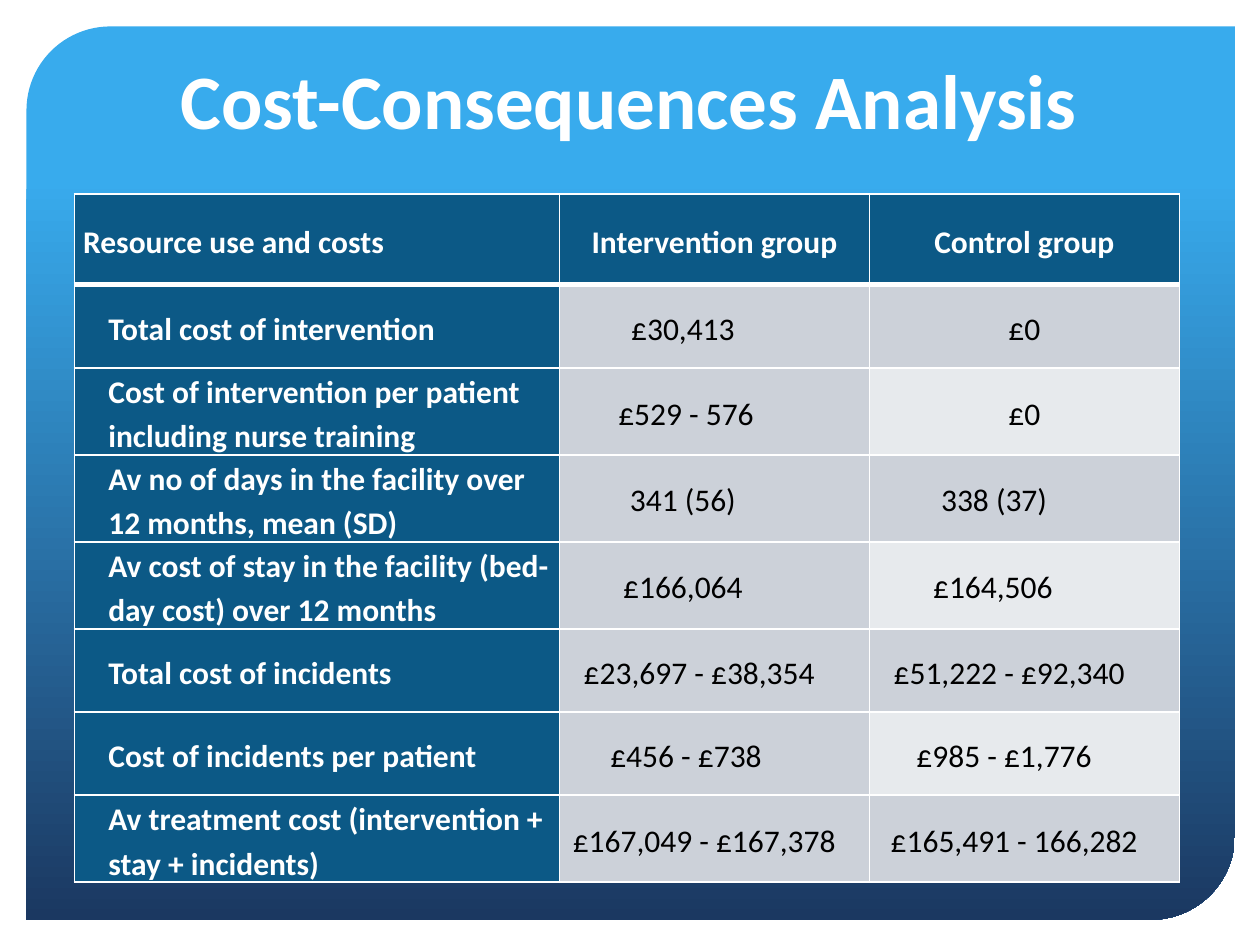
from dataclasses import dataclass
from lxml.etree import Element, SubElement as Sub
from pptx import Presentation
from pptx.dml.color import RGBColor as Rgb
from pptx.enum.shapes import MSO_SHAPE as Shape
from pptx.enum.text import MSO_ANCHOR as Anchor, PP_ALIGN as Align
from pptx.oxml.ns import qn
from pptx.util import Inches as In, Pt


@dataclass(frozen=True)
class Theme:
    font: str = "Calibri"
    title: int = 44
    body: int = 18
    white: str = "FFFFFF"
    black: str = "000000"
    sky: str = "38ABED"
    navy: str = "1B3861"
    head: str = "0C5986"
    band: str = "CCD1D9"
    pale: str = "E7EAED"
    thin: int = 1
    thick: int = 3
    pad: float = 0.07


T = Theme()
WIDE, HIGH = 10, 7.5
COLS = (3.85, 2.46, 2.46)
HEAD, ROW = 0.72, 0.66
LABELS = ("Resource use and costs", "Intervention group", "Control group")
ROWS = (
    ("Total cost of intervention", ("£30,413", 0.5), ("£0", 0)),
    ("Cost of intervention per patient including nurse training",
     ("£529 - 576", 0.45), ("£0", 0)),
    ("Av no of days in the facility over 12 months, mean (SD)",
     ("341 (56)", 0.5), ("338 (37)", 0.48)),
    ("Av cost of stay in the facility (bed-day cost) over 12 months",
     ("£166,064", 0.5), ("£164,506", 0.5)),
    ("Total cost of incidents",
     ("£23,697 - £38,354", 0.24), ("£51,222 - £92,340", 0.24)),
    ("Cost of incidents per patient",
     ("£456 - £738", 0.45), ("£985 - £1,776", 0.32)),
    ("Av treatment cost (intervention + stay + incidents)",
     ("£167,049 - £167,378", 0.16), ("£165,491 - 166,282", 0.16)),
)


def tint(code):
    return Rgb.from_string(code)


def write(para, text, size, color, bold):
    run = para.add_run()
    run.text = text
    font = run.font
    font.name, font.size, font.bold = T.font, Pt(size), bold
    font.color.rgb = tint(color)


def panel(slide):
    edge = 0.021 * WIDE
    box = slide.shapes.add_shape(
        Shape.ROUND_2_DIAG_RECTANGLE, In(edge), In(edge),
        In(WIDE - 2 * edge + 0.01), In(HIGH - 2 * edge + 0.01))
    box.shadow.inherit = False
    box.adjustments[0], box.adjustments[1] = 0.094, 0
    box.line.fill.background()
    box.fill.gradient()
    box.fill.gradient_angle = 270
    for stop, place, code in zip(box.fill.gradient_stops, (0.17, 1), (T.sky, T.navy)):
        stop.position = place
        stop.color.rgb = tint(code)


def title(slide, text):
    box = slide.shapes.add_textbox(In(0.85), In(0.34), In(8.29), In(1.14))
    frame = box.text_frame
    frame.word_wrap = True
    frame.vertical_anchor = Anchor.TOP
    frame.margin_top = In(0.08)
    para = frame.paragraphs[0]
    para.alignment = Align.CENTER
    write(para, text, T.title, T.white, True)


def border(cell, top, base):
    props = cell._tc.get_or_add_tcPr()
    sides = (("L", T.thin), ("R", T.thin), ("T", top), ("B", base))
    for spot, (side, width) in enumerate(sides):
        line = Element(qn("a:ln" + side), w=str(Pt(width)))
        fill = Sub(line, qn("a:solidFill"))
        Sub(fill, qn("a:srgbClr"), val=T.white)
        props.insert(spot, line)


def fill_cell(cell, text, fill, color=T.white, bold=True, mid=False, dent=0, shift=0):
    cell.fill.solid()
    cell.fill.fore_color.rgb = tint(fill)
    cell.vertical_anchor = Anchor.MIDDLE
    cell.margin_left, cell.margin_right = In(T.pad), In(T.pad + shift)
    cell.margin_top = cell.margin_bottom = 0
    para = cell.text_frame.paragraphs[0]
    para.line_spacing = 1.15
    para.alignment = Align.CENTER if mid else Align.LEFT
    if dent:
        props = para._p.get_or_add_pPr()
        props.set("marL", str(In(dent)))
        props.set("indent", "0")
    write(para, text, T.body, color, bold)


def costs(slide):
    count = len(ROWS) + 1
    grid = slide.shapes.add_table(
        count, len(COLS), In(0.59), In(1.54),
        In(sum(COLS)), In(HEAD + ROW * len(ROWS))).table
    for col, width in zip(grid.columns, COLS):
        col.width = In(width)
    for row in range(count):
        grid.rows[row].height = In(ROW if row else HEAD)
    for col, text in enumerate(LABELS):
        fill_cell(grid.cell(0, col), text, T.head, mid=col > 0)
    for row, (label, *values) in enumerate(ROWS, 1):
        fill_cell(grid.cell(row, 0), label, T.head, dent=0.2)
        fills = (T.band, T.band if row % 2 else T.pale)
        for col, ((text, shift), fill) in enumerate(zip(values, fills), 1):
            fill_cell(grid.cell(row, col), text, fill, T.black, False, True, shift=shift)
    for row in range(count):
        for col in range(len(COLS)):
            border(grid.cell(row, col), T.thick if row == 1 else T.thin,
                   T.thin if row else T.thick)


def main():
    deck = Presentation()
    deck.slide_width, deck.slide_height = In(WIDE), In(HIGH)
    slide = deck.slides.add_slide(deck.slide_layouts[6])
    panel(slide)
    title(slide, "Cost-Consequences Analysis")
    costs(slide)
    deck.save("out.pptx")


if __name__ == "__main__":
    main()
